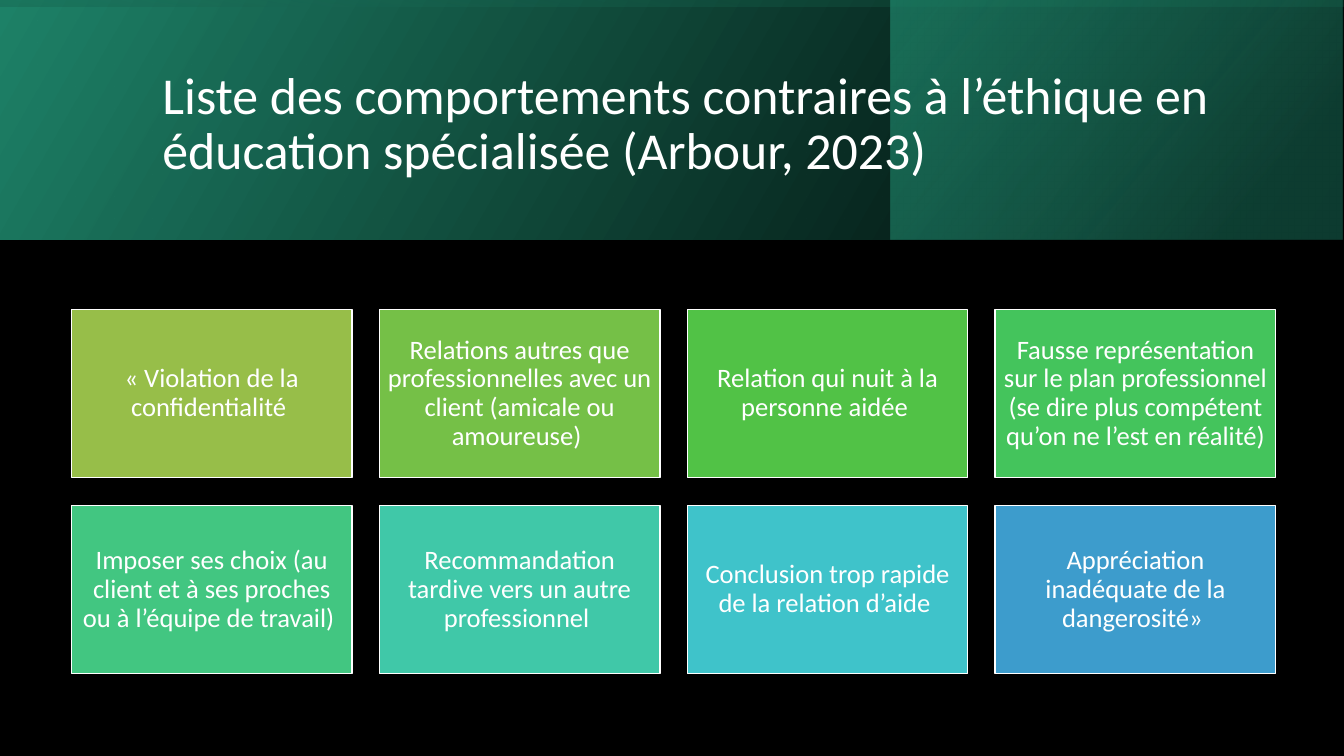
"""Build the slide listing behaviours contrary to ethics in special education."""
from typing import NamedTuple

from lxml import etree
from pptx import Presentation
from pptx.dml.color import RGBColor
from pptx.enum.shapes import MSO_SHAPE
from pptx.enum.text import MSO_ANCHOR, MSO_AUTO_SIZE, PP_ALIGN
from pptx.oxml.ns import qn
from pptx.util import Cm, Pt

RECTANGLE = MSO_SHAPE.RECTANGLE
MIDDLE = MSO_ANCHOR.MIDDLE
NO_AUTOFIT = MSO_AUTO_SIZE.NONE
LEFT, CENTER = PP_ALIGN.LEFT, PP_ALIGN.CENTER

FONT = "Calibri"
WHITE, BLACK = "FFFFFF", "000000"
SLIDE_WIDTH, SLIDE_HEIGHT, BANNER_HEIGHT = 33.87, 19.05, 6.03
COLUMNS = 4
CARD_LEFT, CARD_TOP = 1.8, 7.8
CARD_WIDTH, CARD_HEIGHT = 7.07, 4.24
COLUMN_STEP, ROW_STEP = 7.76, 4.94
TITLE = "Liste des comportements contraires à l’éthique en éducation spécialisée (Arbour, 2023)"


class Stop(NamedTuple):
    """Gradient stop with position and opacity in percent."""
    position: int
    color: str
    opacity: int


class Layer(NamedTuple):
    """Gradient rectangle of the banner, in centimetres and degrees."""
    left: float
    top: float
    width: float
    height: float
    rotation: int
    angle: int
    stops: tuple[Stop, Stop]


class Card(NamedTuple):
    """Behaviour shown in a coloured rectangle."""
    text: str
    color: str


BANNER = (
    Layer(0, 0, SLIDE_WIDTH, BANNER_HEIGHT, 0, 330,
          (Stop(0, BLACK, 96), Stop(100, "1F8369", 100))),
    Layer(22.45, 0, 11.39, BANNER_HEIGHT, 0, 320,
          (Stop(19, "155746", 68), Stop(100, "29AF8C", 48))),
    Layer((SLIDE_WIDTH - BANNER_HEIGHT) / 2, (BANNER_HEIGHT - SLIDE_WIDTH) / 2,
          BANNER_HEIGHT, SLIDE_WIDTH, 270, 350,
          (Stop(23, "1F8369", 16), Stop(99, BLACK, 45))),
)

CARDS = (
    Card("« Violation de la confidentialité ", "97BE49"),
    Card("Relations autres que professionnelles avec un client (amicale ou amoureuse) ", "75C047"),
    Card("Relation qui nuit à la personne aidée ", "51C246"),
    Card("Fausse représentation sur le plan professionnel "
         "(se dire plus compétent qu’on ne l’est en réalité) ", "44C45C"),
    Card("Imposer ses choix (au client et à ses proches ou à l’équipe de travail) ", "42C681"),
    Card("Recommandation tardive vers un autre professionnel ", "40C8A8"),
    Card("Conclusion trop rapide de la relation d’aide ", "3FC3CA"),
    Card("Appréciation inadéquate de la dangerosité» ", "3D9CCC"),
)


def paint(color_format, color: str) -> None:
    """Apply a hex colour to a fill, line or font colour."""
    color_format.rgb = RGBColor.from_string(color)


def write(shape, text: str, size: int, alignment) -> None:
    """Put formatted white text in a shape."""
    frame = shape.text_frame
    frame.text = text
    frame.word_wrap = True
    frame.auto_size = NO_AUTOFIT
    frame.vertical_anchor = MIDDLE
    para = frame.paragraphs[0]
    para.alignment = alignment
    para.line_spacing = 0.9
    font = para.runs[0].font
    font.name = FONT
    font.size = Pt(size)
    paint(font.color, WHITE)


def add_rectangle(page, left: float, top: float, width: float, height: float):
    """Add a rectangle without shadow, measured in centimetres."""
    box = page.shapes.add_shape(RECTANGLE, Cm(left), Cm(top), Cm(width), Cm(height))
    box.shadow.inherit = False
    return box


def add_layer(page, layer: Layer) -> None:
    """Draw one mirrored, translucent gradient of the banner."""
    box = add_rectangle(page, layer.left, layer.top, layer.width, layer.height)
    box.rotation = layer.rotation
    box.element.spPr.find(qn("a:xfrm")).set("flipH", "1")
    box.line.fill.background()
    box.fill.gradient()
    box.fill.gradient_angle = 360 - layer.angle
    for target, stop in zip(box.fill.gradient_stops, layer.stops):
        target.position = stop.position / 100
        paint(target.color, stop.color)
    for node, stop in zip(box.element.spPr.iter(qn("a:srgbClr")), layer.stops):
        etree.SubElement(node, qn("a:alpha")).set("val", str(stop.opacity * 1000))


def add_title(page) -> None:
    """Place the title in front of the banner."""
    title = page.shapes.title
    title.left, title.top, title.width, title.height = Cm(3.84), Cm(0.97), Cm(27), Cm(4.37)
    write(title, TITLE, 37, LEFT)
    page.shapes.element.append(title.element)


def add_card(page, index: int, card: Card) -> None:
    """Draw a behaviour card at its place in the grid."""
    row, column = divmod(index, COLUMNS)
    box = add_rectangle(page, CARD_LEFT + column * COLUMN_STEP, CARD_TOP + row * ROW_STEP,
                        CARD_WIDTH, CARD_HEIGHT)
    box.fill.solid()
    paint(box.fill.fore_color, card.color)
    paint(box.line.color, WHITE)
    box.line.width = Pt(1)
    write(box, card.text, 19, CENTER)
    frame = box.text_frame
    frame.margin_left = frame.margin_right = frame.margin_top = frame.margin_bottom = Cm(0.2)


def main() -> None:
    """Build and save the deck."""
    deck = Presentation()
    deck.slide_width, deck.slide_height = Cm(SLIDE_WIDTH), Cm(SLIDE_HEIGHT)
    page = deck.slides.add_slide(deck.slide_layouts[5])
    page.background.fill.solid()
    paint(page.background.fill.fore_color, BLACK)
    for layer in BANNER:
        add_layer(page, layer)
    add_title(page)
    for index, card in enumerate(CARDS):
        add_card(page, index, card)
    deck.save("out.pptx")


if __name__ == "__main__":
    main()
